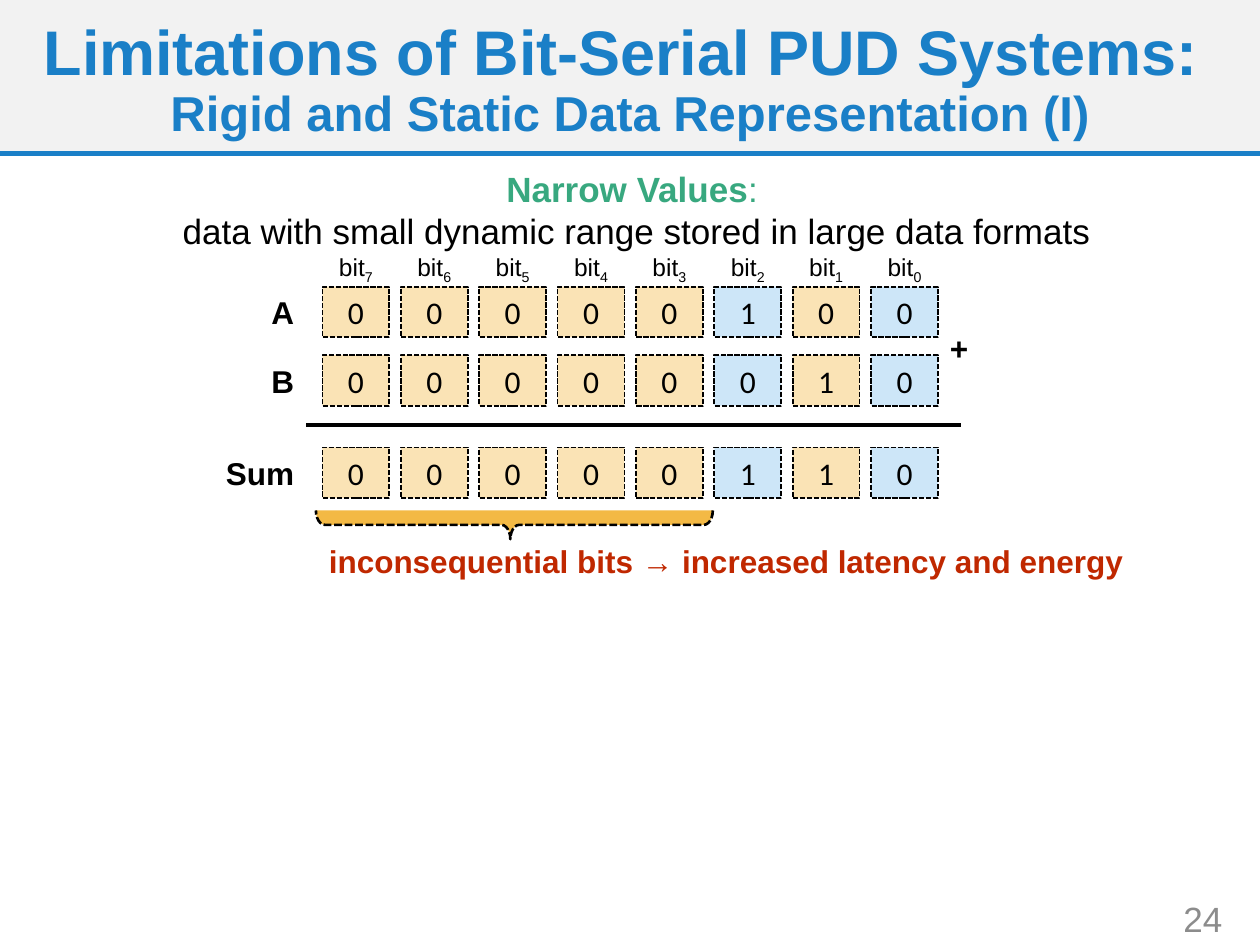
import pptx
import pptx.util
import pptx.dml.color
import pptx.enum.dml
import pptx.enum.shapes
import pptx.enum.text
import pptx.oxml.ns
import lxml.etree

Cm, Pt = pptx.util.Cm, pptx.util.Pt
RGBColor = pptx.dml.color.RGBColor
SHAPE = pptx.enum.shapes.MSO_SHAPE
ALIGN = pptx.enum.text.PP_ALIGN
ANCHOR = pptx.enum.text.MSO_ANCHOR
DASH = pptx.enum.dml.MSO_LINE.SQUARE_DOT

BLACK = RGBColor(0x00, 0x00, 0x00)
BLUE = RGBColor(0x1A, 0x7F, 0xC7)
GREEN = RGBColor(0x38, 0xA8, 0x7F)
RED = RGBColor(0xC0, 0x28, 0x00)
GREY = RGBColor(0x8C, 0x8C, 0x8C)
BAND = RGBColor(0xF2, 0xF2, 0xF2)
CREAM = RGBColor(0xFA, 0xE3, 0xB5)
PALE_BLUE = RGBColor(0xCD, 0xE6, 0xF8)
GOLD = RGBColor(0xF3, 0xB9, 0x45)

prs = pptx.Presentation()
prs.slide_width, prs.slide_height = Cm(25.4), Cm(19.05)
slide = prs.slides.add_slide(prs.slide_layouts[6])
shapes = slide.shapes


def write(sp, paragraphs, align=ALIGN.CENTER, anchor=ANCHOR.MIDDLE, **base):
    """Fill sp with paragraphs of (text, format) runs; base holds shared font values."""
    tf = sp.text_frame
    tf.word_wrap = True
    tf.vertical_anchor = anchor
    for i, runs in enumerate(paragraphs):
        p = tf.paragraphs[0] if i == 0 else tf.add_paragraph()
        p.alignment = align
        for text, extra in runs:
            if text == "\n":
                p.add_line_break()
                continue
            r = p.add_run()
            r.text = text
            fmt = {"name": "Arial", "size": Pt(18), "color": BLACK, **base, **extra}
            r.font.color.rgb = fmt.pop("color")
            for name, value in fmt.items():
                setattr(r.font, name, value)
    return tf


def add_rule(x1, x2, y, color, width):
    line = shapes.add_connector(pptx.enum.shapes.MSO_CONNECTOR.STRAIGHT,
                                Cm(x1), Cm(y), Cm(x2), Cm(y))
    line.line.color.rgb = color
    line.line.width = Pt(width)
    lxml.etree.SubElement(line._element.spPr, pptx.oxml.ns.qn("a:effectLst"))


# Header and page number
band = shapes.add_shape(SHAPE.RECTANGLE, 0, Cm(-0.03), prs.slide_width, Cm(3.15))
band.shadow.inherit = False
band.fill.solid()
band.fill.fore_color.rgb = BAND
band.line.fill.background()
add_rule(0, 25.4, 3.1, BLUE, 3)

title = shapes.add_textbox(0, Cm(0.36), prs.slide_width, Cm(2.57))
tf = write(title, [[("Limitations of Bit-Serial PUD Systems: ", {"size": Pt(36)}), ("\n", {}),
                    ("Rigid and Static Data Representation (I)", {"size": Pt(28)})]],
           color=BLUE, bold=True)
tf.paragraphs[0].line_spacing = 0.9

number = shapes.add_textbox(Cm(22.15), Cm(18.01), Cm(2.74), Cm(1.02))
write(number, [[("24", {})]], align=ALIGN.RIGHT, size=Pt(20), color=GREY)

definition = shapes.add_textbox(Cm(2.03), Cm(3.25), Cm(21.62), Cm(1.96))
write(definition,
      [[("Narrow Values", {"bold": True, "color": GREEN}), (": ", {"color": GREEN})],
       [("data with small dynamic range stored in large data formats", {})]],
      anchor=ANCHOR.TOP, size=Pt(20))

# Eight-bit addition
BIT_LEFT, BIT_PITCH, BIT_WIDTH, BIT_HEIGHT = 6.5, 1.58, 1.35, 1.02
BLUE_BITS = (2, 0)
ROWS = [("A", "00000100", 5.78), ("B", "00000010", 7.16), ("Sum", "00000110", 9.02)]

for col in range(8):
    bit = 7 - col
    x = Cm(BIT_LEFT + col * BIT_PITCH)
    label = shapes.add_textbox(x, Cm(4.95), Cm(BIT_WIDTH), Cm(0.86))
    tf = write(label, [[("bit", {}), (str(bit), {})]], anchor=ANCHOR.TOP, size=Pt(14))
    tf.paragraphs[0].runs[1].font._element.set("baseline", "-25000")
    for name, digits, top in ROWS:
        cell = shapes.add_shape(SHAPE.RECTANGLE, x, Cm(top), Cm(BIT_WIDTH), Cm(BIT_HEIGHT))
        cell.shadow.inherit = False
        cell.fill.solid()
        cell.fill.fore_color.rgb = PALE_BLUE if bit in BLUE_BITS else CREAM
        cell.line.color.rgb = BLACK
        cell.line.width = Pt(1)
        cell.line.dash_style = DASH
        write(cell, [[(digits[col], {})]], name="Calibri")

for name, digits, top in ROWS:
    label = shapes.add_textbox(Cm(4.15), Cm(top), Cm(2.03), Cm(BIT_HEIGHT))
    write(label, [[(name, {})]], align=ALIGN.RIGHT, bold=True)

plus = shapes.add_textbox(Cm(18.9), Cm(6.5), Cm(1.02), Cm(1.02))
write(plus, [[("+", {})]], align=ALIGN.LEFT, anchor=ANCHOR.TOP, bold=True)
add_rule(6.17, 19.38, 8.56, BLACK, 2.25)

# Brace under the inconsequential bits
brace = shapes.add_shape(SHAPE.LEFT_BRACE, Cm(10.08), Cm(6.58), Cm(0.58), Cm(8))
brace.rotation = 270
brace.adjustments[0], brace.adjustments[1] = 0.31, 0.49
brace.shadow.inherit = False
brace.fill.solid()
brace.fill.fore_color.rgb = GOLD
brace.line.color.rgb = BLACK
brace.line.width = Pt(1.5)
brace.line.dash_style = DASH

cost = shapes.add_textbox(Cm(6.38), Cm(10.8), Cm(19.2), Cm(1.02))
write(cost, [[("inconsequential bits → increased latency and energy", {})]],
      align=ALIGN.LEFT, anchor=ANCHOR.TOP, color=RED, bold=True)

prs.save("out.pptx")
